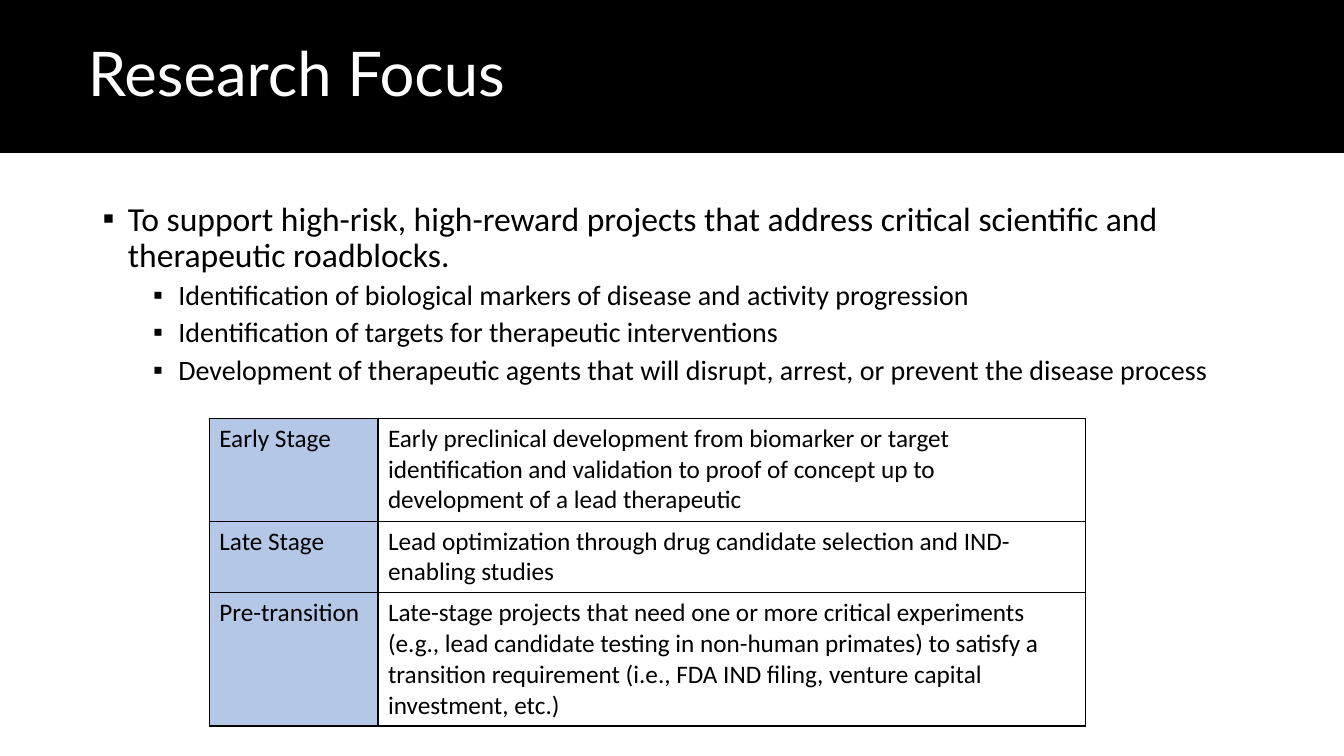
from dataclasses import dataclass

from lxml.etree import SubElement
from pptx import Presentation
from pptx.dml.color import RGBColor
from pptx.enum.shapes import MSO_SHAPE
from pptx.enum.text import MSO_ANCHOR, MSO_AUTO_SIZE, PP_ALIGN
from pptx.oxml.ns import qn
from pptx.util import Pt


@dataclass(frozen=True)
class Theme:
    black: RGBColor = RGBColor(0x00, 0x00, 0x00)
    white: RGBColor = RGBColor(0xFF, 0xFF, 0xFF)
    stage_blue: RGBColor = RGBColor(0xB4, 0xC7, 0xE7)
    title_font: str = "Lato"
    body_font: str = "Calibri"
    title_size: int = 44
    lead_size: int = 24
    detail_size: int = 20
    table_size: int = 18


@dataclass(frozen=True)
class Box:
    left: float
    top: float
    width: float
    height: float

    def place(self, shape):
        shape.left, shape.top = Pt(self.left), Pt(self.top)
        shape.width, shape.height = Pt(self.width), Pt(self.height)


THEME = Theme()
SLIDE_WIDTH, SLIDE_HEIGHT = 960, 540

BULLETS = [
    (0, "To support high-risk, high-reward projects that address critical "
        "scientific and therapeutic roadblocks."),
    (1, "Identification of biological markers of disease and activity progression"),
    (1, "Identification of targets for therapeutic interventions"),
    (1, "Development of therapeutic agents that will disrupt, arrest, or "
        "prevent the disease process"),
]

STAGES = [
    (73.5, "Early Stage",
     "Early preclinical development from biomarker or target identification "
     "and validation to proof of concept up to development of a lead therapeutic"),
    (51, "Late Stage",
     "Lead optimization through drug candidate selection and IND-enabling studies"),
    (95, "Pre-transition",
     "Late-stage projects that need one or more critical experiments (e.g., "
     "lead candidate testing in non-human primates) to satisfy a transition "
     "requirement (i.e., FDA IND filing, venture capital investment, etc.)"),
]


def add_run(paragraph, text, font_name, size, color):
    run = paragraph.add_run()
    run.text = text
    run.font.name = font_name
    run.font.size = Pt(size)
    run.font.color.rgb = color


def add_header(slide, box, text):
    band = slide.shapes.add_shape(MSO_SHAPE.RECTANGLE, 0, 0, 0, 0)
    box.place(band)
    band.shadow.inherit = False
    band.fill.solid()
    band.fill.fore_color.rgb = THEME.black
    band.line.color.rgb = THEME.black
    band.line.width = Pt(1)
    slide.shapes._spTree.insert(2, band._element)

    title = slide.shapes.title
    Box(box.left + 55.5, box.top + 2, 828, box.height - 4).place(title)
    frame = title.text_frame
    frame.auto_size = MSO_AUTO_SIZE.NONE
    frame.vertical_anchor = MSO_ANCHOR.MIDDLE
    paragraph = frame.paragraphs[0]
    paragraph.alignment = PP_ALIGN.LEFT
    paragraph.line_spacing = 0.9
    add_run(paragraph, text, THEME.title_font, THEME.title_size, THEME.white)


def set_bullet(paragraph, indent):
    properties = paragraph._p.get_or_add_pPr()
    properties.set("marL", str(Pt(indent)))
    properties.set("indent", str(-Pt(18)))
    SubElement(properties, qn("a:buFont"), typeface="Arial")
    SubElement(properties, qn("a:buChar"), char="▪")


def add_bullets(slide, box, bullets):
    body = slide.placeholders[1]
    box.place(body)
    frame = body.text_frame
    frame.auto_size = MSO_AUTO_SIZE.NONE
    frame.vertical_anchor = MSO_ANCHOR.TOP
    frame.margin_top = Pt(33.4)
    for index, (level, text) in enumerate(bullets):
        paragraph = frame.add_paragraph() if index else frame.paragraphs[0]
        paragraph.level = level
        paragraph.line_spacing = 0.9
        paragraph.space_before = Pt(5 if index else 0)
        set_bullet(paragraph, 18 + 36 * level)
        size = THEME.detail_size if level else THEME.lead_size
        add_run(paragraph, text, THEME.body_font, size, THEME.black)


def set_borders(cell):
    properties = cell._tc.get_or_add_tcPr()
    for position, side in enumerate(("lnL", "lnR", "lnT", "lnB")):
        line = properties.makeelement(qn(f"a:{side}"), {"w": str(Pt(1))})
        fill = SubElement(line, qn("a:solidFill"))
        SubElement(fill, qn("a:srgbClr"), val=str(THEME.black))
        properties.insert(position, line)


def add_stage_table(slide, box, stages):
    frame = slide.shapes.add_table(
        len(stages), 2, Pt(box.left), Pt(box.top), Pt(box.width), Pt(box.height))
    table = frame.table
    table.first_row = False
    table.horz_banding = False
    label_width = 120.5
    table.columns[0].width = Pt(label_width)
    table.columns[1].width = Pt(box.width - label_width)
    for row, (height, *texts) in enumerate(stages):
        table.rows[row].height = Pt(height)
        for column, text in enumerate(texts):
            cell = table.cell(row, column)
            if column == 0:
                cell.fill.solid()
                cell.fill.fore_color.rgb = THEME.stage_blue
            else:
                cell.fill.background()
            set_borders(cell)
            add_run(cell.text_frame.paragraphs[0], text,
                    THEME.body_font, THEME.table_size, THEME.black)


def main():
    presentation = Presentation()
    presentation.slide_width = Pt(SLIDE_WIDTH)
    presentation.slide_height = Pt(SLIDE_HEIGHT)
    slide = presentation.slides.add_slide(presentation.slide_layouts[1])
    add_header(slide, Box(0, 0, SLIDE_WIDTH, 108.7), "Research Focus")
    add_bullets(slide, Box(66.2, 110.9, 828, 197.3), BULLETS)
    table_height = sum(height for height, *_ in STAGES)
    add_stage_table(slide, Box(149.5, 298.8, 626, table_height), STAGES)
    presentation.save("out.pptx")


if __name__ == "__main__":
    main()
